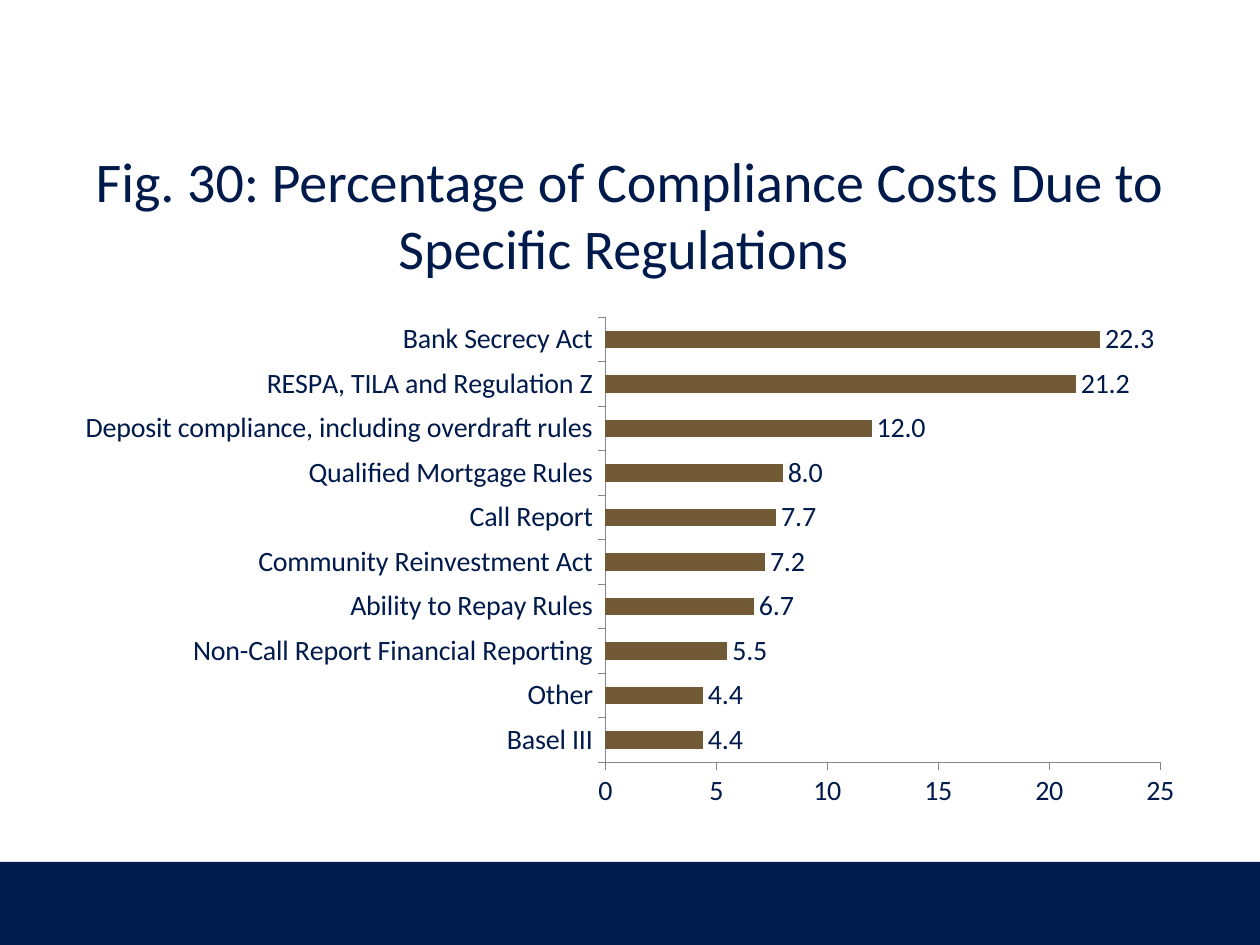
from dataclasses import dataclass

from pptx import Presentation
from pptx.chart.data import CategoryChartData
from pptx.dml.color import RGBColor
from pptx.enum.chart import XL_CHART_TYPE, XL_LABEL_POSITION, XL_TICK_MARK
from pptx.enum.shapes import MSO_SHAPE
from pptx.enum.text import MSO_ANCHOR, PP_ALIGN
from pptx.util import Pt

BAR = XL_CHART_TYPE.BAR_CLUSTERED
OUT_END = XL_LABEL_POSITION.OUTSIDE_END
TICK_OUT, TICK_NONE = XL_TICK_MARK.OUTSIDE, XL_TICK_MARK.NONE
RECT = MSO_SHAPE.RECTANGLE
MIDDLE = MSO_ANCHOR.MIDDLE
CENTER = PP_ALIGN.CENTER


@dataclass(frozen=True)
class Theme:
    font: str = "Calibri"
    navy: RGBColor = RGBColor(0x00, 0x1A, 0x4B)
    brown: RGBColor = RGBColor(0x71, 0x5A, 0x35)
    gray: RGBColor = RGBColor(0x86, 0x86, 0x86)
    title: int = 32
    label: int = 16


THEME = Theme()
WIDTH, HEIGHT = 720, 540
MARGIN = 36
FOOTER = 47.5

# Share of compliance costs in percent, from the bottom bar up
COSTS = {
    "Basel III": 4.4,
    "Other": 4.4,
    "Non-Call Report Financial Reporting": 5.5,
    "Ability to Repay Rules": 6.7,
    "Community Reinvestment Act": 7.2,
    "Call Report": 7.7,
    "Qualified Mortgage Rules": 8.0,
    "Deposit compliance, including overdraft rules": 12.0,
    "RESPA, TILA and Regulation Z": 21.2,
    "Bank Secrecy Act": 22.3,
}


def points(*sizes):
    return [Pt(size) for size in sizes]


def set_font(font, size, color):
    font.name = THEME.font
    font.size = Pt(size)
    font.color.rgb = color


def add_text(slide, text, box, *, size, color, align=CENTER, anchor=MIDDLE):
    frame = slide.shapes.add_textbox(*points(*box)).text_frame
    frame.word_wrap = True
    frame.vertical_anchor = anchor
    para = frame.paragraphs[0]
    para.alignment = align
    run = para.add_run()
    run.text = text
    set_font(run.font, size, color)


def add_band(slide, box, color):
    band = slide.shapes.add_shape(RECT, *points(*box))
    band.shadow.inherit = False
    band.fill.solid()
    band.fill.fore_color.rgb = color
    band.line.fill.background()


def style_axis(axis):
    axis.has_major_gridlines = False
    axis.major_tick_mark = TICK_OUT
    axis.minor_tick_mark = TICK_NONE
    axis.format.line.color.rgb = THEME.gray
    axis.format.line.width = Pt(0.75)


def add_bars(slide, costs, box):
    data = CategoryChartData(number_format="#,##0.0")
    data.categories = list(costs)
    data.add_series("Series 1", list(costs.values()))
    chart = slide.shapes.add_chart(BAR, *points(*box), data).chart
    chart.has_legend = False
    chart.has_title = False
    set_font(chart.font, THEME.label, THEME.navy)

    for axis in (chart.category_axis, chart.value_axis):
        style_axis(axis)
    scale = chart.value_axis
    scale.minimum_scale, scale.maximum_scale, scale.major_unit = 0, 25, 5
    scale.tick_labels.number_format = "0"
    scale.tick_labels.number_format_is_linked = False

    plot = chart.plots[0]
    plot.gap_width = 150
    plot.vary_by_categories = False
    fill = plot.series[0].format.fill
    fill.solid()
    fill.fore_color.rgb = THEME.brown

    plot.has_data_labels = True
    labels = plot.data_labels
    labels.show_value = True
    labels.number_format = "#,##0.0"
    labels.number_format_is_linked = False
    labels.position = OUT_END
    set_font(labels.font, THEME.label, THEME.navy)


def main():
    deck = Presentation()
    deck.slide_width, deck.slide_height = points(WIDTH, HEIGHT)
    slide = deck.slides.add_slide(deck.slide_layouts[6])
    inner = WIDTH - 2 * MARGIN

    add_band(slide, (0, HEIGHT - FOOTER, WIDTH, FOOTER), THEME.navy)
    add_text(
        slide,
        "Fig. 30: Percentage of Compliance Costs Due to Specific Regulations ",
        (MARGIN, 77, inner, 90),
        size=THEME.title,
        color=THEME.navy,
    )
    add_bars(slide, COSTS, (MARGIN, 175.5, inner, 292.5))
    deck.save("out.pptx")


if __name__ == "__main__":
    main()
